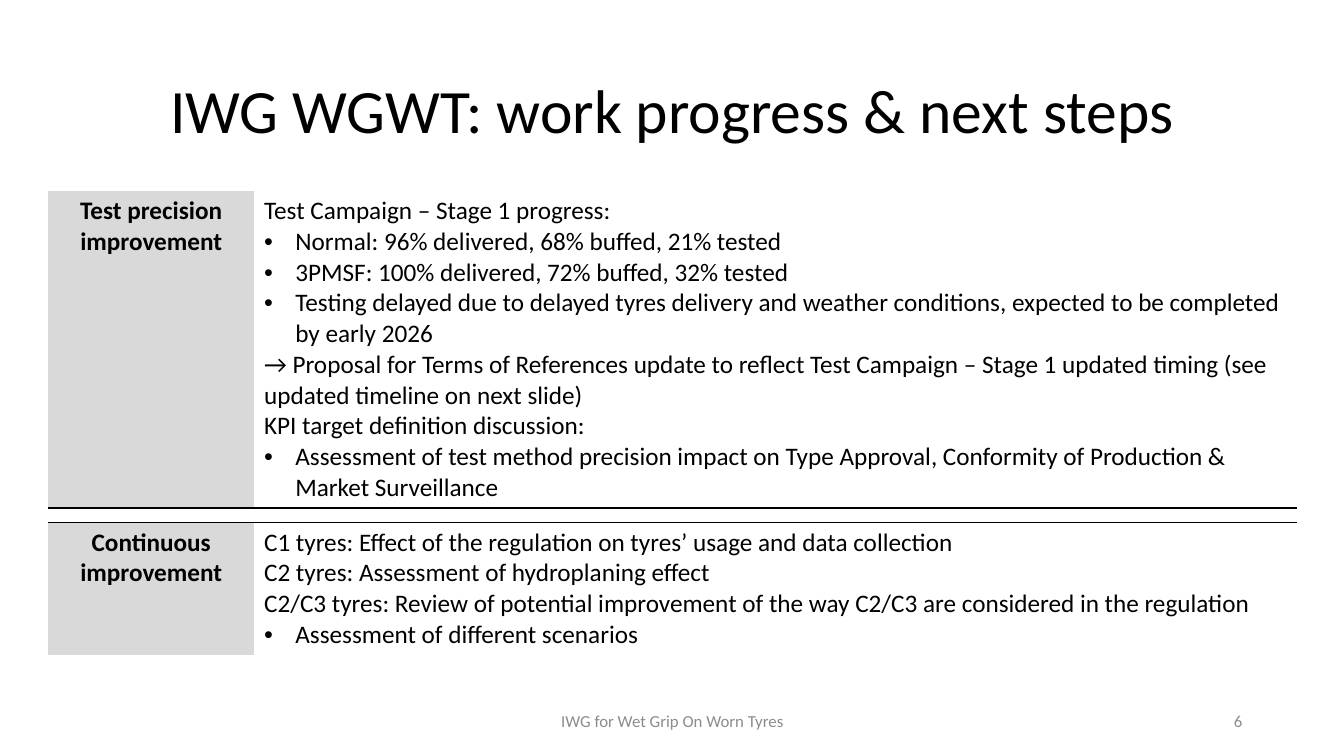
from dataclasses import dataclass
from typing import NamedTuple

from lxml.etree import SubElement
from pptx import Presentation
from pptx.dml.color import RGBColor
from pptx.enum.text import MSO_ANCHOR, PP_ALIGN
from pptx.oxml.ns import qn
from pptx.slide import Slide
from pptx.table import Table, _Cell
from pptx.text.text import _Paragraph
from pptx.util import Pt

EMU_PER_PX = 9144  # 100 px to the inch


@dataclass(frozen=True)
class Theme:
    font: str = "Calibri"
    ink: str = "000000"
    muted: str = "8C8C8C"
    label_fill: str = "D9D9D9"
    title_size: int = 44
    body_size: int = 18
    footer_size: int = 12
    spacer_size: int = 1
    rule_width: int = 1
    plain_table_style: str = "{2D5ABB26-0587-4C30-8999-92F81FD0307C}"


class Frame(NamedTuple):
    left: int
    top: int
    width: int
    height: int


class Caption(NamedTuple):
    text: str
    frame: Frame
    size: int
    color: str
    align: PP_ALIGN
    line_spacing: float = 1.0


class Line(NamedTuple):
    text: str
    bullet: bool = False


class Topic(NamedTuple):
    label: str
    lines: list[Line]
    height: int


THEME = Theme()
SLIDE_WIDTH, SLIDE_HEIGHT = 1333, 750
TABLE_LEFT, TABLE_TOP = 48, 189
COLUMN_WIDTHS = (204, 1034)
SPACER_HEIGHT = 14
BULLET_INDENT = 31

CAPTIONS = [
    Caption("IWG WGWT: work progress & next steps", Frame(92, 40, 1150, 145),
            THEME.title_size, THEME.ink, PP_ALIGN.CENTER, 0.9),
    Caption("IWG for Wet Grip On Worn Tyres", Frame(442, 695, 450, 40),
            THEME.footer_size, THEME.muted, PP_ALIGN.CENTER),
    Caption("6", Frame(942, 695, 300, 40),
            THEME.footer_size, THEME.muted, PP_ALIGN.RIGHT),
]

PRECISION = Topic("Test precision improvement", [
    Line("Test Campaign – Stage 1 progress:"),
    Line("Normal: 96% delivered, 68% buffed, 21% tested", bullet=True),
    Line("3PMSF: 100% delivered, 72% buffed, 32% tested", bullet=True),
    Line("Testing delayed due to delayed tyres delivery and weather conditions, "
         "expected to be completed by early 2026", bullet=True),
    Line("→ Proposal for Terms of References update to reflect Test Campaign – "
         "Stage 1 updated timing (see updated timeline on next slide)"),
    Line("KPI target definition discussion:"),
    Line("Assessment of test method precision impact on Type Approval, "
         "Conformity of Production & Market Surveillance", bullet=True),
], 315)

CONTINUOUS = Topic("Continuous improvement", [
    Line("C1 tyres: Effect of the regulation on tyres’ usage and data collection"),
    Line("C2 tyres: Assessment of hydroplaning effect"),
    Line("C2/C3 tyres: Review of potential improvement of the way C2/C3 are "
         "considered in the regulation"),
    Line("Assessment of different scenarios", bullet=True),
], 132)


def px(length: int) -> int:
    return length * EMU_PER_PX


def set_font(para: _Paragraph, size: int, color: str, bold: bool = False) -> None:
    para.font.name = THEME.font
    para.font.size = Pt(size)
    para.font.bold = bold
    para.font.color.rgb = RGBColor.from_string(color)


def add_bullet(para: _Paragraph) -> None:
    properties = para._p.get_or_add_pPr()
    properties.set("marL", str(px(BULLET_INDENT)))
    properties.set("indent", str(-px(BULLET_INDENT)))
    SubElement(properties, qn("a:buFont")).set("typeface", "Arial")
    SubElement(properties, qn("a:buChar")).set("char", "•")


def add_caption(page: Slide, caption: Caption) -> None:
    box = page.shapes.add_textbox(*map(px, caption.frame))
    frame = box.text_frame
    frame.word_wrap = True
    frame.vertical_anchor = MSO_ANCHOR.MIDDLE
    para = frame.paragraphs[0]
    para.text = caption.text
    para.alignment = caption.align
    para.line_spacing = caption.line_spacing
    set_font(para, caption.size, caption.color)


def fill_topic(table: Table, row: int, topic: Topic) -> None:
    label, details = table.cell(row, 0), table.cell(row, 1)
    label.fill.solid()
    label.fill.fore_color.rgb = RGBColor.from_string(THEME.label_fill)
    details.fill.background()
    heading = label.text_frame.paragraphs[0]
    heading.text = topic.label
    heading.alignment = PP_ALIGN.CENTER
    set_font(heading, THEME.body_size, THEME.ink, bold=True)
    frame = details.text_frame
    for index, line in enumerate(topic.lines):
        para = frame.add_paragraph() if index else frame.paragraphs[0]
        para.text = line.text
        if line.bullet:
            add_bullet(para)
        set_font(para, THEME.body_size, THEME.ink)


def make_spacer(cell: _Cell) -> None:
    """Shrink an empty cell to a thin gap with a rule along its top."""
    cell.margin_top = cell.margin_bottom = 0
    para = cell.text_frame.paragraphs[0]
    SubElement(para._p, qn("a:endParaRPr")).set("sz", str(THEME.spacer_size * 100))
    border = SubElement(cell._tc.get_or_add_tcPr(), qn("a:lnT"))
    border.set("w", str(Pt(THEME.rule_width)))
    paint = SubElement(border, qn("a:solidFill"))
    SubElement(paint, qn("a:srgbClr")).set("val", THEME.ink)
    cell.fill.background()


def add_topic_table(page: Slide) -> None:
    heights = (PRECISION.height, SPACER_HEIGHT, CONTINUOUS.height)
    frame = Frame(TABLE_LEFT, TABLE_TOP, sum(COLUMN_WIDTHS), sum(heights))
    table = page.shapes.add_table(len(heights), len(COLUMN_WIDTHS), *map(px, frame)).table
    table.first_row = table.horz_banding = False
    table._tbl.tblPr.find(qn("a:tableStyleId")).text = THEME.plain_table_style
    for column, width in zip(table.columns, COLUMN_WIDTHS):
        column.width = px(width)
    for row, height in zip(table.rows, heights):
        row.height = px(height)
    fill_topic(table, 0, PRECISION)
    for cell in table.rows[1].cells:
        make_spacer(cell)
    fill_topic(table, 2, CONTINUOUS)


def main() -> None:
    deck = Presentation()
    deck.slide_width, deck.slide_height = px(SLIDE_WIDTH), px(SLIDE_HEIGHT)
    page = deck.slides.add_slide(deck.slide_layouts[6])
    for caption in CAPTIONS:
        add_caption(page, caption)
    add_topic_table(page)
    deck.save("out.pptx")


if __name__ == "__main__":
    main()
